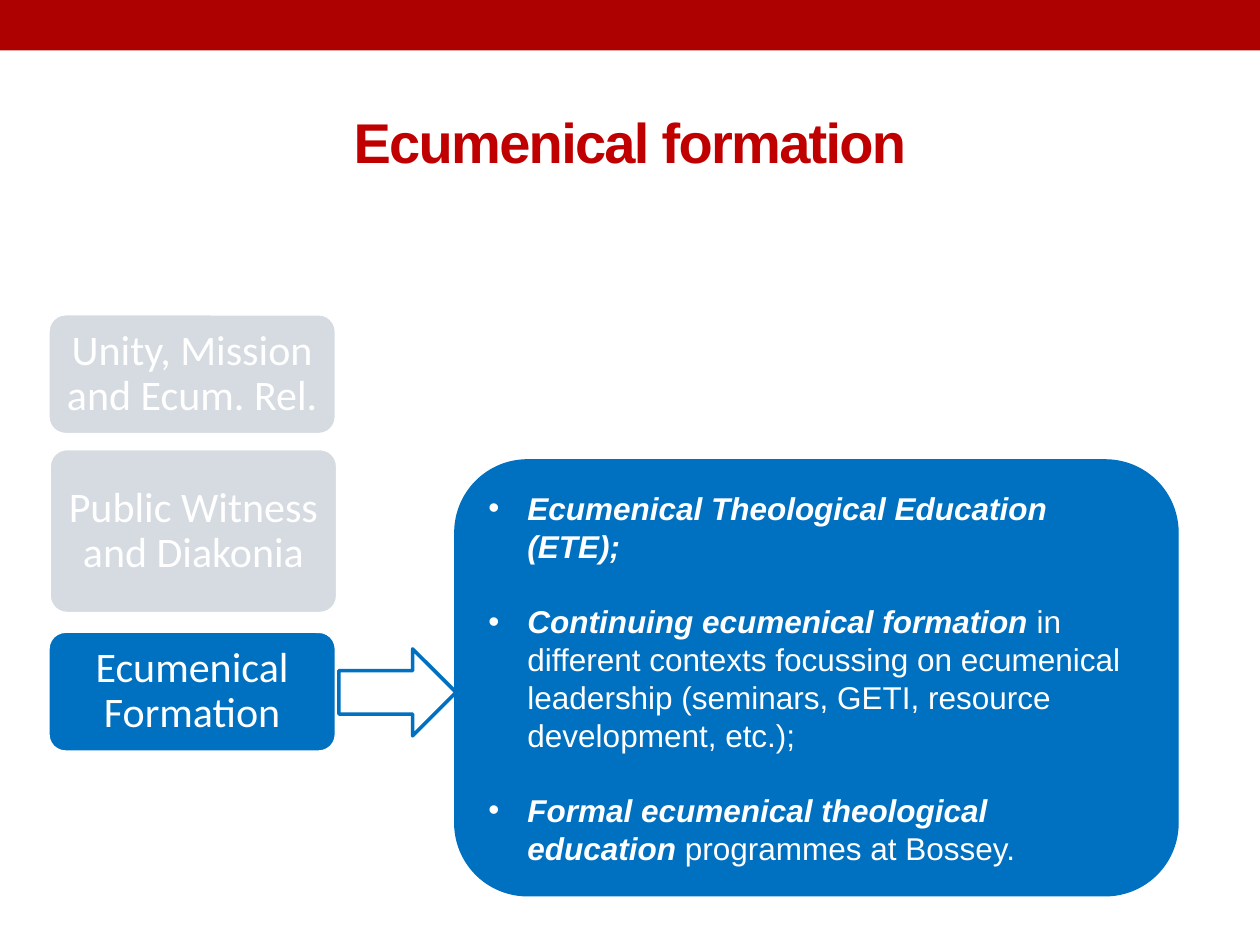
from lxml import etree
from pptx import Presentation
from pptx.dml.color import RGBColor
from pptx.enum.shapes import MSO_SHAPE
from pptx.enum.text import MSO_ANCHOR, PP_ALIGN
from pptx.oxml.ns import qn
from pptx.util import Inches, Pt

RECT, ROUNDED = MSO_SHAPE.RECTANGLE, MSO_SHAPE.ROUNDED_RECTANGLE
ARROW = MSO_SHAPE.RIGHT_ARROW
MIDDLE, CENTER, LEFT = MSO_ANCHOR.MIDDLE, PP_ALIGN.CENTER, PP_ALIGN.LEFT

COLORS = {"band": "AD0101", "title": "C00000", "active": "0070C0",
          "muted": "D6DBE1", "white": "FFFFFF"}

# Programme areas: text, left, top, height, fill
AREAS = [
    ("Unity, Mission and Ecum. Rel.", 0.38, 2.49, 0.96, "muted"),
    ("Public Witness and Diakonia", 0.39, 3.56, 1.31, "muted"),
    ("Ecumenical Formation", 0.38, 5.01, 0.96, "active"),
]
AREA_WIDTH = 2.29
CORNER_RADIUS = 0.14

# Details: emphasised words, then plain words
DETAILS = [
    ("Ecumenical Theological Education (ETE);", ""),
    ("Continuing ecumenical formation ",
     "in different contexts focussing on ecumenical leadership "
     "(seminars, GETI, resource development, etc.);"),
    ("Formal ecumenical theological education ", "programmes at Bossey."),
]


def color(name):
    return RGBColor.from_string(COLORS[name])


def style_font(font, name, size, tint):
    font.name, font.size = name, Pt(size)
    font.color.rgb = color(tint)


def add_box(slide, kind, place, fill, line=None, width=2.08):
    box = slide.shapes.add_shape(kind, *map(Inches, place))
    box.shadow.inherit = False
    box.fill.solid()
    box.fill.fore_color.rgb = color(fill)
    if line:
        box.line.color.rgb = color(line)
        box.line.width = Pt(width)
    else:
        box.line.fill.background()
    return box


def set_title(slide, text):
    title = slide.shapes.title
    title.left, title.top, title.width, title.height = map(
        Inches, (0.5, 0.58, 9, 1.08))
    title.text_frame.vertical_anchor = MIDDLE
    para = title.text_frame.paragraphs[0]
    para.alignment = CENTER
    span = para.add_run()
    span.text = text
    style_font(span.font, "Arial", 32, "title")
    span.font.bold = True
    span._r.get_or_add_rPr().set("spc", "-100")


def add_area(slide, text, left, top, height, fill):
    box = add_box(slide, ROUNDED, (left, top, AREA_WIDTH, height), fill, "white")
    box.adjustments[0] = CORNER_RADIUS / height
    frame = box.text_frame
    frame.word_wrap, frame.vertical_anchor = True, MIDDLE
    # The rounded corners add their own inset to these margins
    frame.margin_left = frame.margin_right = Inches(0.06)
    frame.margin_top = frame.margin_bottom = Inches(0.04)
    para = frame.paragraphs[0]
    para.text = text
    para.alignment, para.line_spacing = CENTER, 0.9
    style_font(para.font, "Calibri", 24, "white")


def add_bullet(para, indent):
    props = para._p.get_or_add_pPr()
    props.set("marL", str(Inches(indent)))
    props.set("indent", str(-Inches(indent)))
    etree.SubElement(props, qn("a:buFont")).set("typeface", "Arial")
    etree.SubElement(props, qn("a:buChar")).set("char", "•")


def add_details(slide):
    box = add_box(slide, ROUNDED, (3.61, 3.65, 5.74, 3.46),
                  "active", "active", 0.75)
    frame = box.text_frame
    frame.word_wrap, frame.vertical_anchor = True, MIDDLE
    for index, (strong, plain) in enumerate(DETAILS):
        para = frame.add_paragraph() if index else frame.paragraphs[0]
        add_bullet(para, 0.31)
        para.alignment = LEFT
        if index:
            para.space_before = Pt(21.5)
        style_font(para.font, "Arial", 18, "white")
        for text, emphasis in ((strong, True), (plain, False)):
            if text:
                span = para.add_run()
                span.text = text
                style_font(span.font, "Arial", 18, "white")
                span.font.bold = span.font.italic = emphasis


def main():
    deck = Presentation()
    deck.slide_width, deck.slide_height = Inches(10), Inches(7.5)
    slide = deck.slides.add_slide(deck.slide_layouts[5])

    # Top band and title
    add_box(slide, RECT, (0, 0, 10, 0.4), "band")
    set_title(slide, "Ecumenical formation")

    # Programme areas, with an arrow from the active one to its details
    for area in AREAS:
        add_area(slide, *area)
    add_box(slide, ARROW, (2.69, 5.15, 0.93, 0.69), "white", "active")
    add_details(slide)

    deck.save("out.pptx")


if __name__ == "__main__":
    main()
